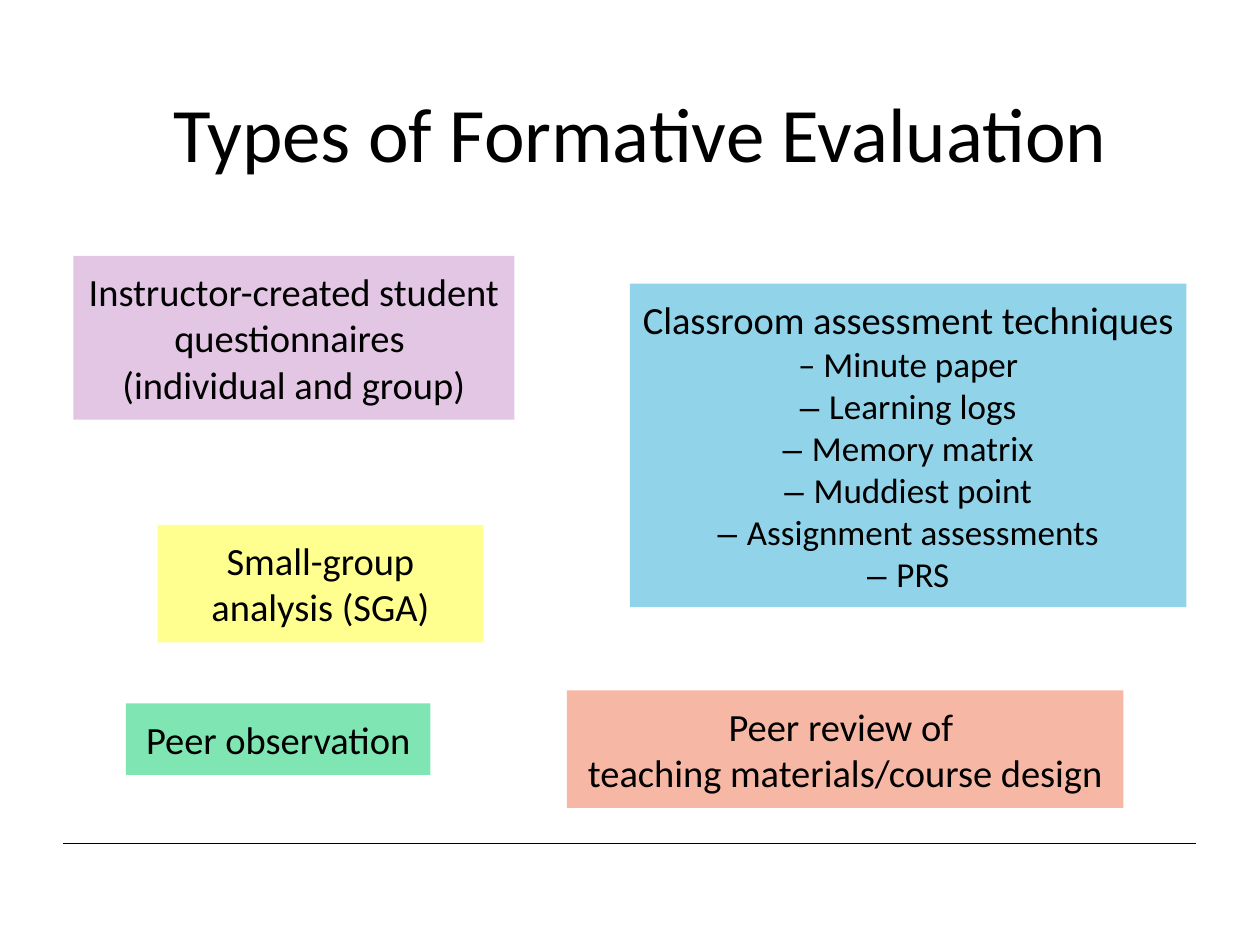
from lxml import etree
from pptx import Presentation
from pptx.dml.color import RGBColor
from pptx.enum import shapes, text
from pptx.oxml.ns import qn
from pptx.util import Cm, Pt

BLACK = "000000"


def color(hex_string):
    return RGBColor.from_string(hex_string)


def add_text(paragraph, content, size, name="Calibri"):
    """Append centred text; a vertical tab marks a line break."""
    paragraph.alignment = text.PP_ALIGN.CENTER
    for index, line in enumerate(content.split("\v")):
        if index:
            paragraph.add_line_break()
        run = paragraph.add_run()
        run.text = line
        run.font.color.rgb = color(BLACK)
        for attribute, value in {"name": name, "size": Pt(size)}.items():
            setattr(run.font, attribute, value)


presentation = Presentation()
presentation.slide_width, presentation.slide_height = Cm(25.4), Cm(19.05)
slide = presentation.slides.add_slide(presentation.slide_layouts[6])

footer_line = slide.shapes.add_connector(
    shapes.MSO_CONNECTOR.STRAIGHT, Cm(1.27), Cm(17), Cm(24.1), Cm(17))
footer_line.line.color.rgb = color(BLACK)
footer_line.line.width = Pt(0.75)
etree.SubElement(footer_line._element.spPr, qn("a:effectLst"))

title = slide.shapes.add_textbox(Cm(1.48), Cm(1.06), Cm(22.86), Cm(3.18))
title.text_frame.word_wrap = True
title.text_frame.vertical_anchor = text.MSO_ANCHOR.MIDDLE
add_text(title.text_frame.paragraphs[0], "Types of Formative Evaluation", 44)

# left, top, width, height in cm; fill; opacity in percent; heading
boxes = [
    (1.48, 5.16, 8.89, 3.3, "E2C6E4", 100,
     "Instructor-created student questionnaires \v(individual and group)"),
    (11.43, 13.92, 11.22, 2.37, "F27C5C", 55,
     "Peer review of \vteaching materials/course design"),
    (2.54, 14.18, 6.14, 1.44, "00CC66", 50, "Peer observation"),
    (3.18, 10.58, 6.56, 2.37, "FFFF66", 73, "Small-group analysis (SGA)"),
    (12.7, 5.72, 11.22, 6.52, "0099CC", 43, "Classroom assessment techniques"),
]
frame_format = {
    "word_wrap": True,
    "auto_size": text.MSO_AUTO_SIZE.SHAPE_TO_FIT_TEXT,
    "vertical_anchor": text.MSO_ANCHOR.TOP,
    "margin_left": Cm(0.25),
    "margin_right": Cm(0.25),
    "margin_top": Cm(0.25),
    "margin_bottom": Cm(0.25),
}
for *bounds, fill, opacity, heading in boxes:
    box = slide.shapes.add_shape(shapes.MSO_SHAPE.RECTANGLE, *map(Cm, bounds))
    box.shadow.inherit = False
    box.line.fill.background()
    box.fill.solid()
    box.fill.fore_color.rgb = color(fill)
    if opacity < 100:
        fill_color = box._element.spPr.find(qn("a:solidFill"))[0]
        etree.SubElement(fill_color, qn("a:alpha"), val=str(opacity * 1000))
    for attribute, value in frame_format.items():
        setattr(box.text_frame, attribute, value)
    add_text(box.text_frame.paragraphs[0], heading, 22)

# The classroom box comes last and also lists its techniques
techniques = ["Minute paper", "Learning logs", "Memory matrix",
              "Muddiest point", "Assignment assessments", "PRS"]
for index, technique in enumerate(techniques):
    paragraph = box.text_frame.add_paragraph()
    add_text(paragraph, "– ", 20, "Arial" if index else "Calibri")
    add_text(paragraph, technique, 20)

presentation.save("out.pptx")
